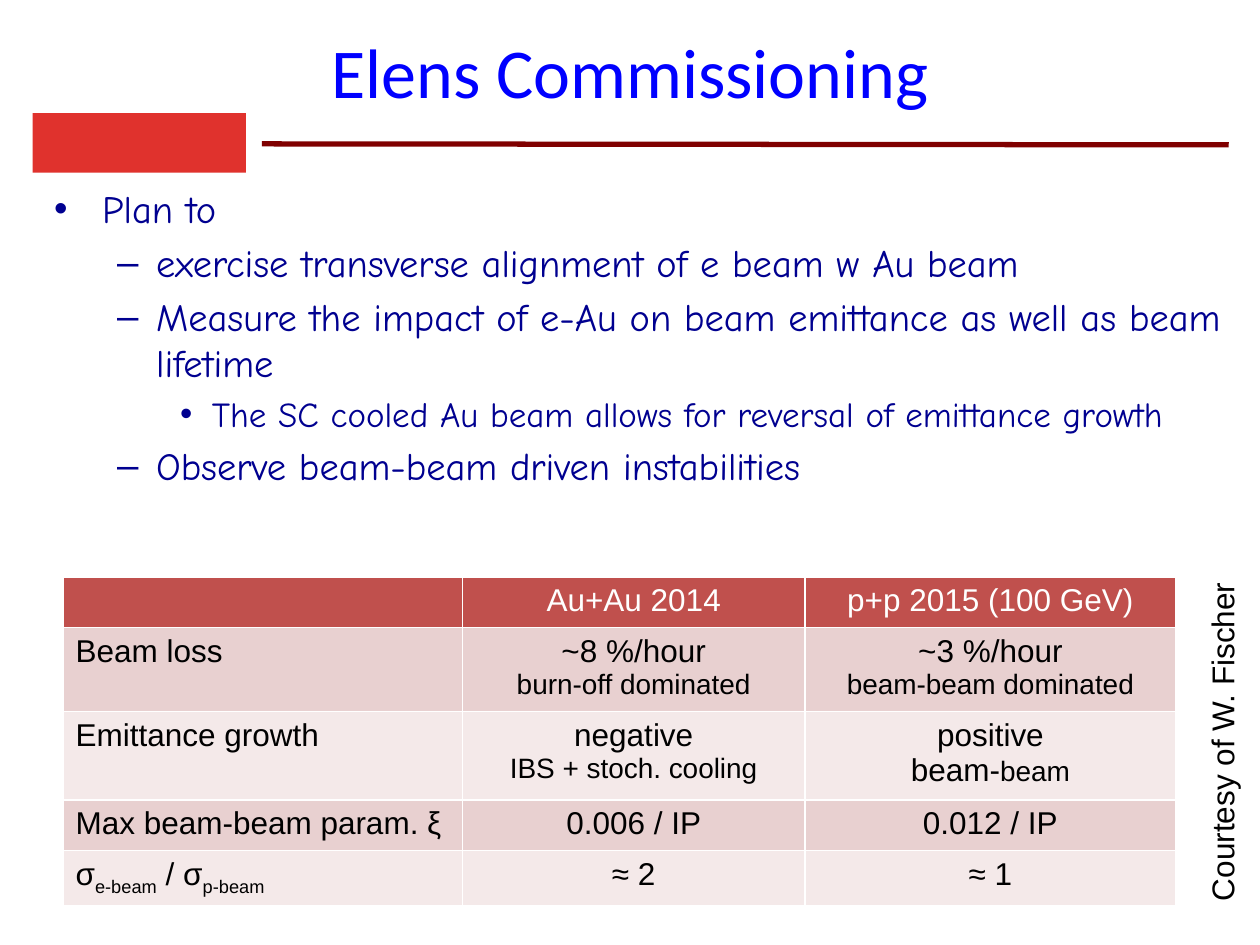
from lxml import etree
from pptx import Presentation
from pptx.dml.color import RGBColor
from pptx.enum.shapes import MSO_CONNECTOR, MSO_SHAPE
from pptx.enum.text import MSO_ANCHOR, PP_ALIGN
from pptx.oxml import parse_xml
from pptx.oxml.ns import qn
from pptx.util import Cm, Pt

CENTER, LEFT = PP_ALIGN.CENTER, PP_ALIGN.LEFT
MIDDLE, TOP = MSO_ANCHOR.MIDDLE, MSO_ANCHOR.TOP
STRAIGHT, RECTANGLE = MSO_CONNECTOR.STRAIGHT, MSO_SHAPE.RECTANGLE

BLACK = RGBColor(0, 0, 0)
WHITE = RGBColor(0xFF, 0xFF, 0xFF)
BLUE = RGBColor(0, 0, 0xFF)
NAVY = RGBColor(0, 0, 0x90)
MAROON = RGBColor(0x80, 0, 0)
RED = RGBColor(0xE0, 0x32, 0x2D)
HEADER_RED = RGBColor(0xC0, 0x50, 0x4D)
BANDS = (RGBColor(0xE8, 0xD0, 0xD0), RGBColor(0xF4, 0xE9, 0xE9))

DRAWING = "http://schemas.openxmlformats.org/drawingml/2006/main"

# Level: (text indent in cm, hanging indent in cm, bullet, size)
LEVELS = [(0.97, 0.97, "•", 22), (2.06, 0.79, "–", 22), (3.18, 0.64, "•", 20)]
PLAN = [
    (0, "Plan to"),
    (1, "exercise transverse alignment of e beam w Au beam"),
    (1, "Measure the impact of e-Au on beam emittance as well as beam lifetime"),
    (2, "The SC cooled Au beam allows for reversal of emittance growth"),
    (1, "Observe beam-beam driven instabilities"),
]

# A cell is a list of paragraphs; a paragraph is a list of (text, format)
SMALL, SUB = {"size": 16}, {"baseline": -25000}


def plain(text):
    return [[(text, {})]]


ROWS = [
    [[], plain("Au+Au 2014"), plain("p+p 2015 (100 GeV)")],
    [plain("Beam loss"),
     [[("~8 %/hour\n", {}), ("burn-off dominated", SMALL)]],
     [[("~3 %/hour", {})], [("beam-beam dominated", SMALL)]]],
    [plain("Emittance growth"),
     [[("negative\n", {}), ("IBS + stoch. cooling", SMALL)]],
     [[("positive\nbeam-", {}), ("beam", SMALL)]]],
    [plain("Max beam-beam param. ξ"), plain("0.006 / IP"), plain("0.012 / IP")],
    [[[("σ", {}), ("e-beam", SUB), (" / σ", {}), ("p-beam", SUB)]],
     plain("≈ 2"), plain("≈ 1")],
]
COLUMN_WIDTHS = (8.05, 6.91, 7.47)
ROW_HEIGHTS = (1.02, 1.5, 1.57, 0.92, 0.98)


def write(para, text, size=18, font="Arial", color=BLACK, baseline=0):
    """Add text to a paragraph, with a line break at each newline."""
    for index, line in enumerate(text.split("\n")):
        if index:
            para.add_line_break()
        if line:
            span = para.add_run()
            span.text = line
            span.font.size, span.font.name = Pt(size), font
            span.font.color.rgb = color
            if baseline:
                span.font._element.set("baseline", str(baseline))


def add_box(page, left, top, width, height, wrap=True, anchor=TOP):
    box = page.shapes.add_textbox(Cm(left), Cm(top), Cm(width), Cm(height))
    box.text_frame.word_wrap = wrap
    box.text_frame.vertical_anchor = anchor
    return box


def add_header(page, left, top, width):
    """Title, plain block and rule."""
    rule = page.shapes.add_connector(STRAIGHT, Cm(left + 4.92), Cm(top + 2.47),
                                     Cm(left + width), Cm(top + 2.49))
    rule.line.color.rgb, rule.line.width = MAROON, Pt(3)
    etree.SubElement(rule._element.spPr, qn("a:effectLst"))

    block = page.shapes.add_shape(RECTANGLE, Cm(left + 0.3), Cm(top + 1.85),
                                  Cm(4.3), Cm(1.2))
    block.shadow.inherit = False
    block.fill.solid()
    block.fill.fore_color.rgb = RED
    block.line.fill.background()

    title = add_box(page, left + 0.91, top, 22.86, 1.98, anchor=MIDDLE)
    para = title.text_frame.paragraphs[0]
    para.alignment = CENTER
    write(para, "Elens Commissioning", size=40, font="Calibri", color=BLUE)


def add_plan(page, left, top, width, height):
    """Bulleted list in three levels."""
    frame = add_box(page, left, top, width, height).text_frame
    for index, (level, text) in enumerate(PLAN):
        para = frame.add_paragraph() if index else frame.paragraphs[0]
        indent, hanging, bullet, size = LEVELS[level]
        para.level = level
        properties = para._p.get_or_add_pPr()
        properties.set("marL", str(Cm(indent)))
        properties.set("indent", str(-Cm(hanging)))
        etree.SubElement(properties, qn("a:buFont")).set("typeface", "Arial")
        etree.SubElement(properties, qn("a:buChar")).set("char", bullet)
        para.space_before = Pt(0.2 * size if index else 0)
        write(para, text, size=size, font="Comic Neue", color=NAVY)


def style_cell(cell, fill):
    """Fill a cell and give it thin white borders."""
    cell.fill.solid()
    cell.fill.fore_color.rgb = fill
    for index, side in enumerate(("lnL", "lnR", "lnT", "lnB")):
        border = parse_xml(
            f'<a:{side} xmlns:a="{DRAWING}" w="{Pt(1)}"><a:solidFill>'
            f'<a:srgbClr val="{WHITE}"/></a:solidFill></a:{side}>')
        cell._tc.get_or_add_tcPr().insert(index, border)


def add_results(page, left, top):
    """Comparison table of the two runs."""
    table = page.shapes.add_table(
        len(ROWS), len(COLUMN_WIDTHS), Cm(left), Cm(top),
        Cm(sum(COLUMN_WIDTHS)), Cm(sum(ROW_HEIGHTS))).table
    for column, width in zip(table.columns, COLUMN_WIDTHS):
        column.width = Cm(width)
    for row, height in zip(table.rows, ROW_HEIGHTS):
        row.height = Cm(height)
    for r, contents in enumerate(ROWS):
        for c, paragraphs in enumerate(contents):
            cell = table.cell(r, c)
            style_cell(cell, BANDS[(r - 1) % 2] if r else HEADER_RED)
            frame = cell.text_frame
            for index, spans in enumerate(paragraphs):
                para = frame.add_paragraph() if index else frame.paragraphs[0]
                para.alignment = CENTER if c else LEFT
                for text, style in spans:
                    write(para, text, color=BLACK if r else WHITE, **style)


def add_credit(page, left, top, width, height):
    """Credit turned to read upwards beside the table."""
    box = add_box(page, left, top, width, height, wrap=False)
    box.rotation = 270
    write(box.text_frame.paragraphs[0], "Courtesy of W. Fischer")


def main():
    deck = Presentation()
    deck.slide_width, deck.slide_height = Cm(25.4), Cm(19.05)
    page = deck.slides.add_slide(deck.slide_layouts[6])
    add_header(page, 0.36, 0.43, 24.41)
    add_plan(page, 0.84, 3.61, 24.13, 8.05)
    add_results(page, 1.27, 11.63)
    add_credit(page, 21.13, 14.4, 7.01, 1.02)
    deck.save("out.pptx")


if __name__ == "__main__":
    main()
